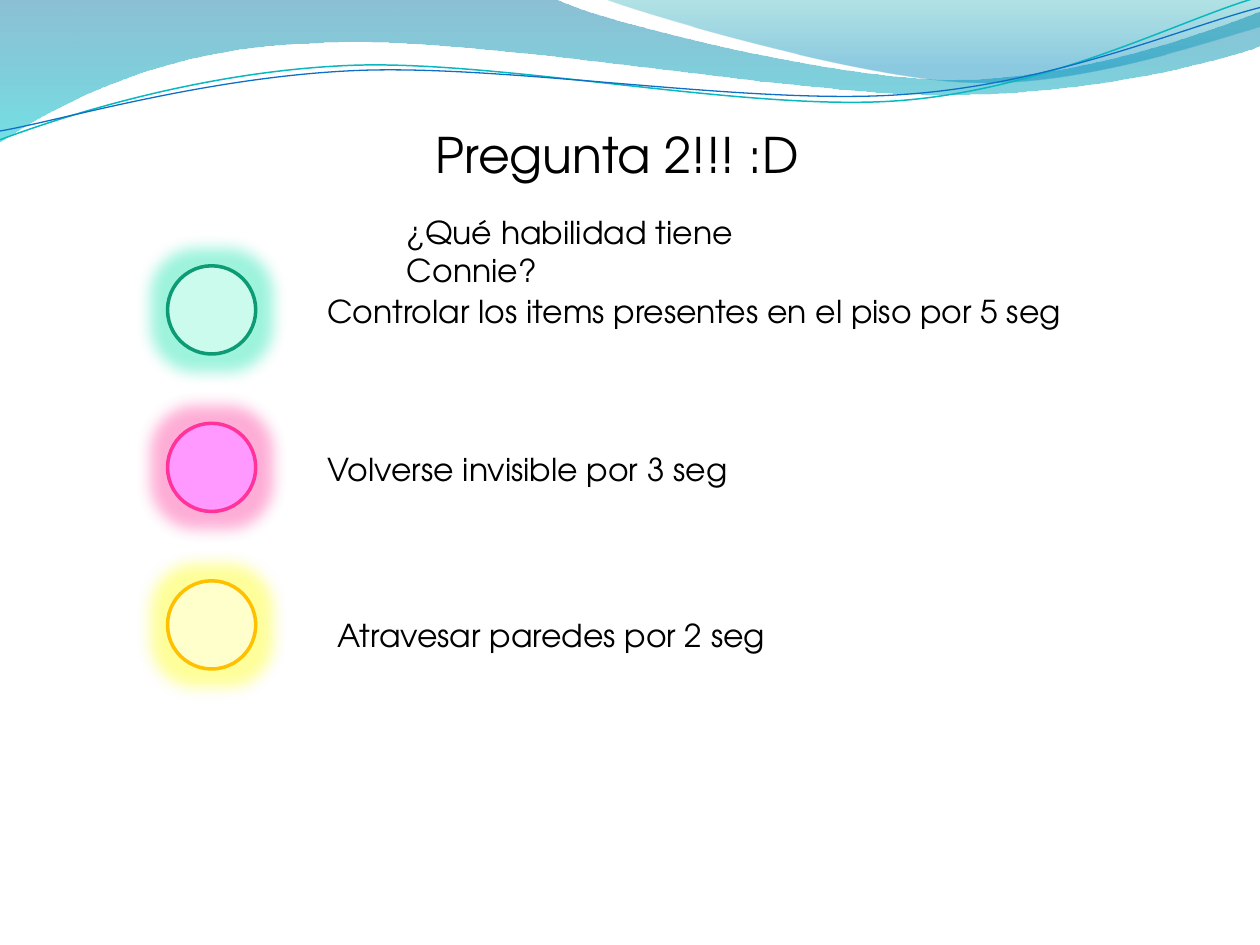
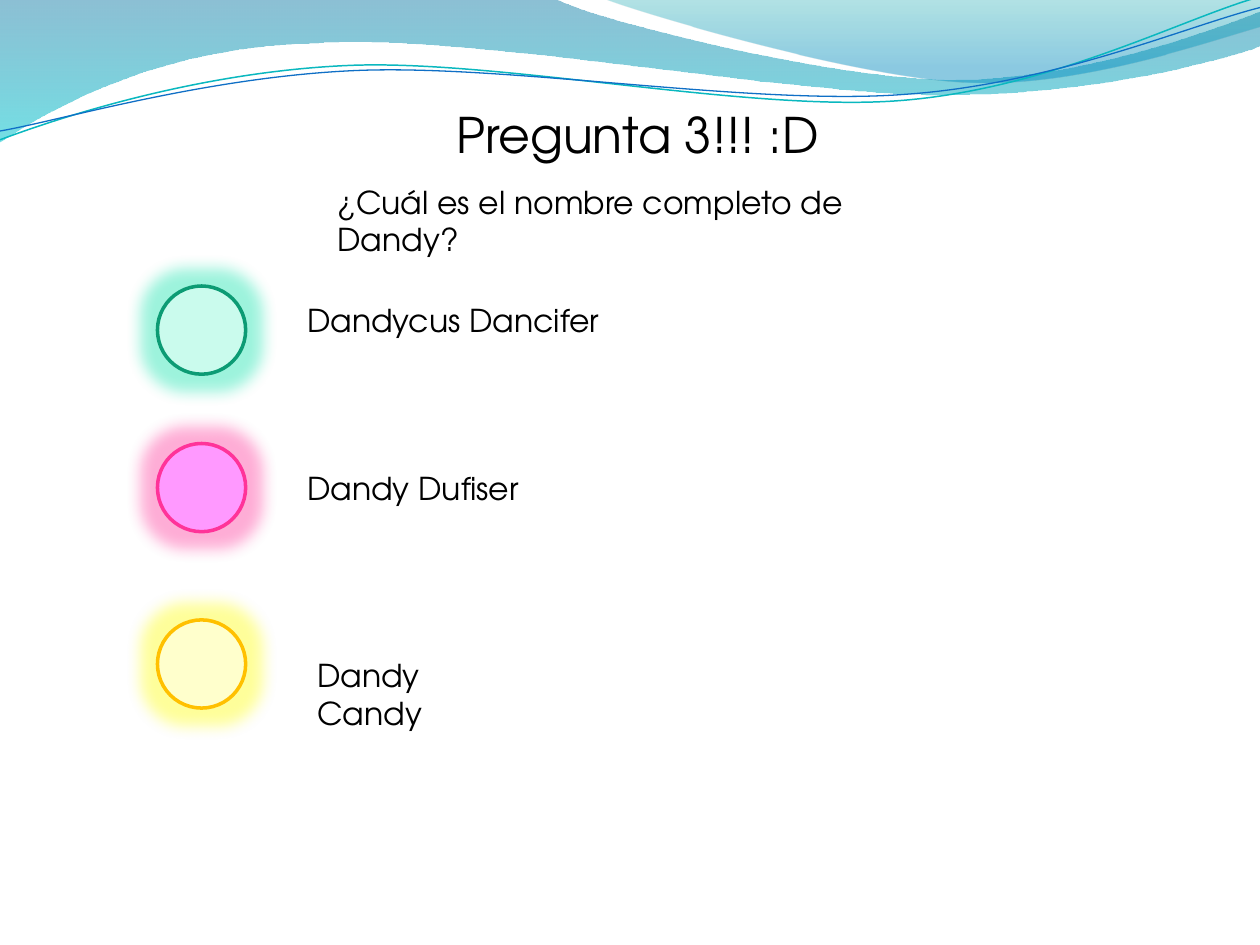
from pptx import Presentation
from pptx.dml.color import RGBColor
from pptx.enum.shapes import MSO_SHAPE
from pptx.enum.text import MSO_ANCHOR, MSO_AUTO_SIZE, PP_ALIGN
from pptx.oxml.ns import qn
from pptx.util import Inches, Pt
from lxml.etree import SubElement

QUIZ = [
    {"title": ("Pregunta 2!!! :D", 3.36, 0.94, 3.18),
     "ask": ("¿Qué habilidad tiene Connie?", 3.13, 1.64, 3.78),
     "dots": (1.33, [2.11, 3.36, 4.61]),
     "picks": [("Controlar los items presentes en el piso por 5 seg", 2.5, 2.27, 6.24),
               ("Volverse invisible por 3 seg", 2.5, 3.52, 3.53),
               ("Atravesar paredes por 2 seg", 2.58, 4.84, 3.68)]},
    {"title": ("Pregunta 3!!! :D", 3.52, 0.78, 3.18),
     "ask": ("¿Cuál es el nombre completo de Dandy?", 2.58, 1.4, 5.12),
     "dots": (1.25, [2.27, 3.52, 4.92]),
     "picks": [(" Dandycus Dancifer", 2.27, 2.34, 2.6),
               ("Dandy Dufiser", 2.34, 3.67, 1.94),
               ("Dandy Candy", 2.42, 5.16, 1.84)]},
]

DOTS = [("CAFBED", "0C9B74", "0AE3AA"),
        ("FF99FF", "FF3399", "FF3399"),
        ("FFFFCC", "FFC000", "FFFF00")]
SIZE = 0.7

BANDS = [
    ([(0, 0), (4.4, -0.01), (4.76, 0.17, 6.64, 0.63, 7.58, 0.63),
      (8.53, 0.63, 9.58, 0.26, 10, 0.09), (10.01, 0.36),
      (9.83, 0.44, 8.7, 0.76, 7.46, 0.75), (6.22, 0.75, 3.82, 0.28, 2.57, 0.34),
      (1.29, 0.36, 0.46, 0.83, -0.01, 1.13), (0, 0)],
     [(0, "0074A1", 45), (1, "00C6CF", 55)]),
    ([(4.79, -0.01), (5.09, 0.11, 6.82, 0.62, 7.69, 0.65),
      (8.56, 0.69, 9.61, 0.32, 10, 0.21), (10, 0), (4.79, -0.01)],
     [(0, "00A1A9", 30), (0.8, "008BBF", 45)]),
]
WAVES = [
    ([(0, 1.11), (0.48, 0.93, 1.58, 0.57, 2.77, 0.52),
      (3.95, 0.47, 5.93, 0.89, 7.13, 0.8), (8.33, 0.71, 9.38, 0.15, 9.98, -0.02)],
     "0AB8BF", 0.85),
    ([(0, 1.04), (0.47, 0.96, 1.64, 0.61, 2.83, 0.56),
      (4.03, 0.51, 5.97, 0.84, 7.17, 0.75), (8.36, 0.67, 9.41, 0.21, 10, 0.06)],
     "0F6FC6", 0.75),
]

FRAME = {"word_wrap": True, "auto_size": MSO_AUTO_SIZE.NONE,
         "vertical_anchor": MSO_ANCHOR.TOP}
FONT = {"name": "TeX Gyre Adventor", "bold": False}


def tint(hue):
    return RGBColor.from_string(hue)


def apply(item, looks):
    for key, value in looks.items():
        setattr(item, key, value)


def outline(slide, steps, close):
    start, *rest = [tuple(Inches(n) for n in step[-2:]) for step in steps]
    pen = slide.shapes.build_freeform(*start, scale=1)
    pen.add_line_segments(rest, close=close)
    shape = pen.convert_to_shape()
    shape.shadow.inherit = False
    lines = list(shape.element.iter(qn("a:lnTo")))
    for line, step in zip(lines, steps[1:]):
        if len(step) == 6:
            bend(shape, line, step)
    return shape


def bend(shape, line, step):
    track = line.getparent()
    curve = SubElement(track, qn("a:cubicBezTo"))
    for x, y in zip(step[::2], step[1::2]):
        SubElement(curve, qn("a:pt"), x=str(Inches(x) - shape.left),
                   y=str(Inches(y) - shape.top))
    track.replace(line, curve)


def draw_bands(slide):
    shapes = []
    for steps, stops in BANDS:
        band = outline(slide, steps, True)
        band.line.fill.background()
        band.fill.gradient()
        band.fill.gradient_angle = 270
        for stop, (place, hue, _) in zip(band.fill.gradient_stops, stops):
            stop.position = place
            stop.color.rgb = tint(hue)
        for node, stop in zip(band.element.iter(qn("a:srgbClr")), stops):
            SubElement(node, qn("a:alpha"), val=str(stop[2] * 1000))
        shapes.append(band)
    for steps, hue, width in WAVES:
        wave = outline(slide, steps, False)
        wave.fill.background()
        wave.line.color.rgb = tint(hue)
        wave.line.width = Pt(width)
        shapes.append(wave)
    return shapes


def write(box, text, left, top, width, size, height):
    apply(box, {"left": Inches(left), "top": Inches(top),
                "width": Inches(width), "height": Inches(height)})
    frame = box.text_frame
    frame.text = text
    apply(frame, FRAME)
    line = frame.paragraphs[0]
    line.alignment = PP_ALIGN.LEFT
    font = line.runs[0].font
    apply(font, {**FONT, "size": Pt(size)})
    font.color.rgb = tint("000000")


def add_text(slide, entry):
    write(slide.shapes.add_textbox(0, 0, 0, 0), *entry, 18, 0.4)


def add_dot(slide, left, top, fill, edge, halo):
    dot = slide.shapes.add_shape(MSO_SHAPE.OVAL, Inches(left), Inches(top),
                                 Inches(SIZE), Inches(SIZE))
    dot.shadow.inherit = False
    dot.fill.solid()
    dot.fill.fore_color.rgb = tint(fill)
    dot.line.color.rgb = tint(edge)
    dot.line.width = Pt(2)
    effect = next(dot.element.iter(qn("a:effectLst")))
    glow = SubElement(effect, qn("a:glow"), rad=str(Pt(18)))
    hue = SubElement(glow, qn("a:srgbClr"), val=halo)
    SubElement(hue, qn("a:alpha"), val="40000")


def main():
    deck = Presentation()
    deck.slide_width, deck.slide_height = Inches(10), Inches(7.5)
    layout = deck.slide_layouts[5]
    for index, quiz in enumerate(QUIZ):
        slide = deck.slides.add_slide(layout)
        if index == 0:
            for shape in draw_bands(slide):
                layout.shapes.element.append(shape.element)
        write(slide.shapes.title, *quiz["title"], 28, 0.57)
        add_text(slide, quiz["ask"])
        left, tops = quiz["dots"]
        for top, hues in zip(tops, DOTS):
            add_dot(slide, left, top, *hues)
        for pick in quiz["picks"]:
            add_text(slide, pick)
    deck.save("out.pptx")


if __name__ == "__main__":
    main()
